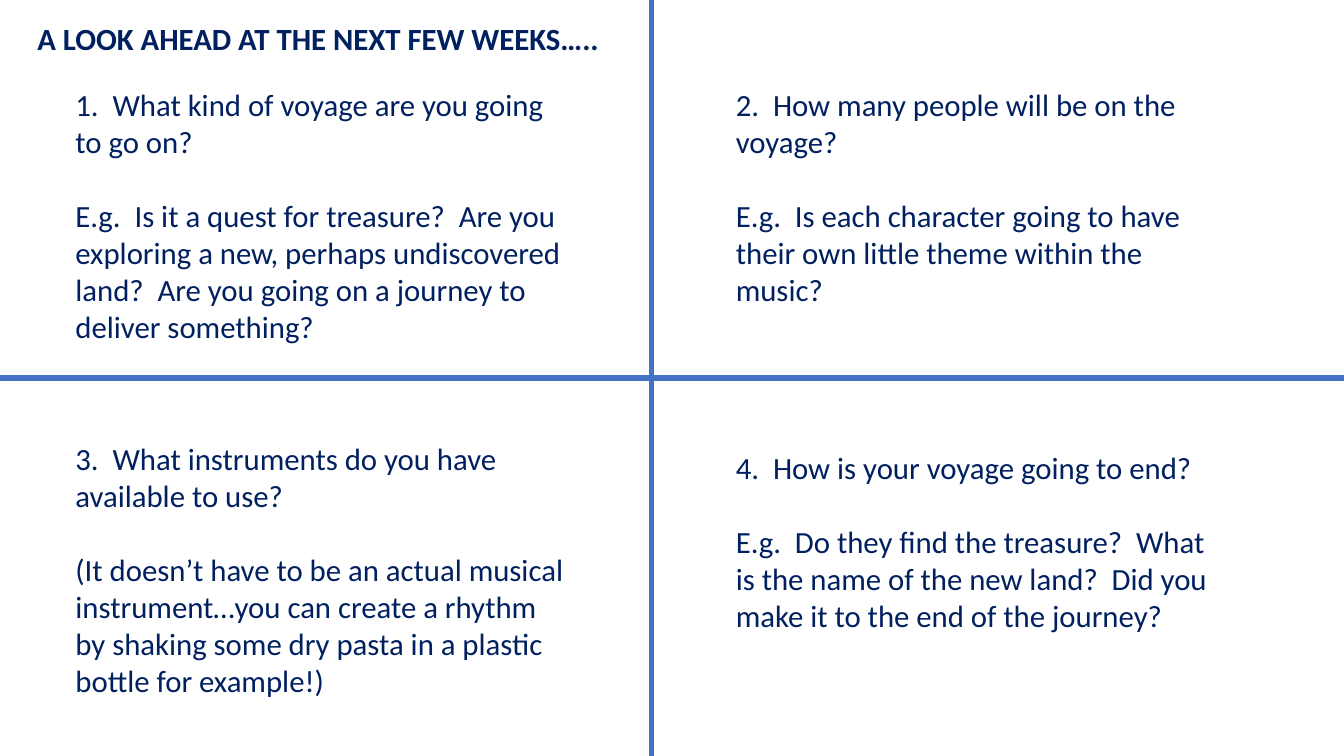
from lxml import etree
from pptx import Presentation
from pptx.dml.color import RGBColor
from pptx.enum.shapes import MSO_CONNECTOR
from pptx.enum.text import MSO_ANCHOR, MSO_AUTO_SIZE, PP_ALIGN
from pptx.oxml.ns import qn
from pptx.util import Inches, Pt

STRAIGHT = MSO_CONNECTOR.STRAIGHT
TOP = MSO_ANCHOR.TOP
FIT_SHAPE = MSO_AUTO_SIZE.SHAPE_TO_FIT_TEXT
LEFT = PP_ALIGN.LEFT

COLORS = {"background": "FFFFFF", "divider": "4472C4", "text": "002060"}
FONT = "Calibri"
TEXT_SIZE = 22
HINT_GAP = 26.85  # one line of text, in points
PAGE_WIDTH, PAGE_HEIGHT = 13.33, 7.5
DIVIDER_X = 6.46
LEFT_COLUMN, RIGHT_COLUMN = 0.65, 7.2
QUESTION_WIDTH = 5.07

# left, top, height, question, hint
QUESTIONS = [
    (LEFT_COLUMN, 0.8, 2.69,
     "1.  What kind of voyage are you going to go on?",
     "E.g.  Is it a quest for treasure?  Are you exploring a new, perhaps "
     "undiscovered land?  Are you going on a journey to deliver something?"),
    (RIGHT_COLUMN, 0.8, 2.32,
     "2.  How many people will be on the voyage?",
     "E.g.  Is each character going to have their own little theme within "
     "the music?"),
    (LEFT_COLUMN, 4.31, 2.69,
     "3.  What instruments do you have available to use?",
     "(It doesn’t have to be an actual musical instrument…you can create a "
     "rhythm by shaking some dry pasta in a plastic bottle for example!)"),
    (RIGHT_COLUMN, 4.4, 1.95,
     "4.  How is your voyage going to end?",
     "E.g.  Do they find the treasure?  What is the name of the new land?  "
     "Did you make it to the end of the journey?"),
]


def color(name):
    return RGBColor.from_string(COLORS[name])


def write_text(box, *texts, bold=False, gap=0):
    """Fill the box with one paragraph per text, gap points apart."""
    frame = box.text_frame
    frame.word_wrap = True
    frame.auto_size = FIT_SHAPE
    frame.vertical_anchor = TOP
    for index, text in enumerate(texts):
        para = frame.add_paragraph() if index else frame.paragraphs[0]
        para.alignment = LEFT
        para.space_before = Pt(gap if index else 0)
        span = para.add_run()
        span.text = text
        span.font.name = FONT
        span.font.size = Pt(TEXT_SIZE)
        span.font.bold = bold
        span.font.color.rgb = color("text")


def add_title(page, text):
    title = page.shapes.title
    title.left, title.top = Inches(0.27), Inches(0.15)
    title.width, title.height = Inches(5.84), Inches(0.47)
    write_text(title, text, bold=True)


def add_divider(page, x1, y1, x2, y2):
    line = page.shapes.add_connector(
        STRAIGHT, Inches(x1), Inches(y1), Inches(x2), Inches(y2))
    line.line.color.rgb = color("divider")
    line.line.width = Pt(4)
    etree.SubElement(line._element.spPr, qn("a:effectLst"))


def add_question(page, left, top, height, question, hint):
    box = page.shapes.add_textbox(
        Inches(left), Inches(top), Inches(QUESTION_WIDTH), Inches(height))
    write_text(box, question, hint, gap=HINT_GAP)


def main():
    deck = Presentation()
    deck.slide_width = Inches(PAGE_WIDTH)
    deck.slide_height = Inches(PAGE_HEIGHT)
    page = deck.slides.add_slide(deck.slide_layouts.get_by_name("Title Only"))
    page.background.fill.solid()
    page.background.fill.fore_color.rgb = color("background")

    add_title(page, "A LOOK AHEAD AT THE NEXT FEW WEEKS…..")
    add_divider(page, DIVIDER_X, 0, DIVIDER_X, PAGE_HEIGHT)
    add_divider(page, 0, PAGE_HEIGHT / 2, PAGE_WIDTH, PAGE_HEIGHT / 2)
    for question in QUESTIONS:
        add_question(page, *question)

    deck.save("out.pptx")


if __name__ == "__main__":
    main()
